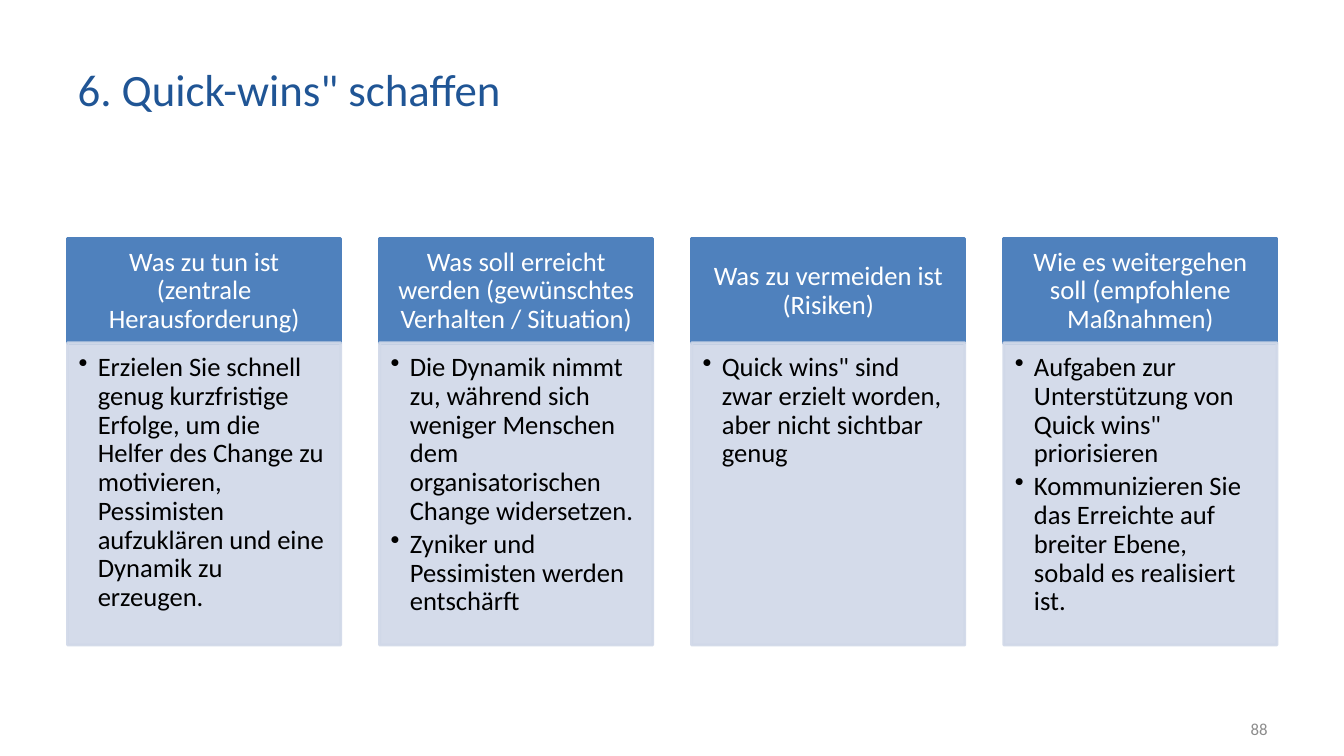
from lxml import etree
from pptx import Presentation
from pptx.dml.color import RGBColor
from pptx.enum import shapes, text
from pptx.oxml import ns
from pptx.util import Inches, Pt

TITLE_BLUE = RGBColor(0x20, 0x55, 0x95)
HEADER_BLUE = RGBColor(0x4F, 0x81, 0xBD)
BODY_BLUE = RGBColor(0xD0, 0xD8, 0xE8)
WHITE = RGBColor(0xFF, 0xFF, 0xFF)
BLACK = RGBColor(0, 0, 0)
NUMBER_GREY = RGBColor(0x8C, 0x8C, 0x8C)

LEFT, PITCH, WIDTH = 0.67, 3.095, 2.71
HEADER_TOP, HEADER_HEIGHT = 2.37, 1.04
BODY_TOP, BODY_HEIGHT = 3.4, 3
BODY_OPACITY = 90

COLUMNS = [
    ("Was zu tun ist (zentrale Herausforderung)",
     ["Erzielen Sie schnell genug kurzfristige Erfolge, um die Helfer des "
      "Change zu motivieren, Pessimisten aufzuklären und eine Dynamik zu "
      "erzeugen."]),
    ("Was soll erreicht werden (gewünschtes Verhalten / Situation)",
     ["Die Dynamik nimmt zu, während sich weniger Menschen dem "
      "organisatorischen Change widersetzen.",
      "Zyniker und Pessimisten werden entschärft"]),
    ("Was zu vermeiden ist (Risiken)",
     ['Quick wins" sind zwar erzielt worden, aber nicht sichtbar genug']),
    ("Wie es weitergehen soll (empfohlene Maßnahmen)",
     ['Aufgaben zur Unterstützung von Quick wins" priorisieren',
      "Kommunizieren Sie das Erreichte auf breiter Ebene, sobald es "
      "realisiert ist."]),
]


def place(shape, left, top, width, height):
    shape.left, shape.top = Inches(left), Inches(top)
    shape.width, shape.height = Inches(width), Inches(height)


def style(paragraph, size, color, align):
    paragraph.alignment = align
    paragraph.font.name = "Calibri"
    paragraph.font.size = Pt(size)
    paragraph.font.color.rgb = color


def set_opacity(fill_format, percent):
    """Add an alpha value to the solid colour of a shape's fill or line."""
    for color in fill_format.iter(ns.qn("a:srgbClr")):
        etree.SubElement(color, ns.qn("a:alpha"), val=str(percent * 1000))


def add_bullet(paragraph):
    properties = paragraph._p.get_or_add_pPr()
    properties.set("marL", str(Inches(0.19)))
    properties.set("indent", str(Inches(-0.19)))
    etree.SubElement(properties, ns.qn("a:buChar"), char="•")


def add_panel(slide, bounds, color, insets, anchor):
    """Add a filled rectangle and return it with its text frame set up."""
    panel = slide.shapes.add_shape(
        shapes.MSO_SHAPE.RECTANGLE, *(Inches(value) for value in bounds))
    panel.shadow.inherit = False
    panel.fill.solid()
    panel.fill.fore_color.rgb = color
    panel.line.color.rgb = color
    panel.line.width = Pt(2)
    frame = panel.text_frame
    frame.word_wrap = True
    frame.vertical_anchor = anchor
    (frame.margin_left, frame.margin_top,
     frame.margin_right, frame.margin_bottom) = map(Inches, insets)
    return panel


def add_header(slide, left, heading):
    header = add_panel(slide, (left, HEADER_TOP, WIDTH, HEADER_HEIGHT),
                       HEADER_BLUE, (0.15, 0.08, 0.15, 0.08),
                       text.MSO_ANCHOR.MIDDLE)
    paragraph = header.text_frame.paragraphs[0]
    paragraph.text = heading
    paragraph.line_spacing = 0.9
    style(paragraph, 19, WHITE, text.PP_ALIGN.CENTER)


def add_body(slide, left, points):
    body = add_panel(slide, (left, BODY_TOP, WIDTH, BODY_HEIGHT),
                     BODY_BLUE, (0.11, 0.11, 0.15, 0.17),
                     text.MSO_ANCHOR.TOP)
    set_opacity(body._element.spPr, BODY_OPACITY)
    frame = body.text_frame
    for index, point in enumerate(points):
        paragraph = frame.add_paragraph() if index else frame.paragraphs[0]
        paragraph.text = point
        add_bullet(paragraph)
        paragraph.line_spacing = 0.9
        paragraph.space_after = Pt(3)
        style(paragraph, 19, BLACK, text.PP_ALIGN.LEFT)


def set_title(slide, wording):
    title = slide.shapes.title
    place(title, LEFT, 0.3, 9.91, 1.15)
    title.text_frame.text = wording
    title.text_frame.vertical_anchor = text.MSO_ANCHOR.MIDDLE
    style(title.text_frame.paragraphs[0], 32, TITLE_BLUE, text.PP_ALIGN.LEFT)


def add_slide_number(slide, number):
    box = slide.shapes.add_textbox(
        Inches(9.56), Inches(7.03), Inches(3.11), Inches(0.4))
    frame = box.text_frame
    frame.word_wrap = True
    frame.vertical_anchor = text.MSO_ANCHOR.MIDDLE
    frame.text = number
    style(frame.paragraphs[0], 12, NUMBER_GREY, text.PP_ALIGN.RIGHT)


def main():
    deck = Presentation()
    deck.slide_width, deck.slide_height = Inches(13.33), Inches(7.5)
    slide = deck.slides.add_slide(deck.slide_layouts.get_by_name("Title Only"))
    set_title(slide, '6. Quick-wins" schaffen')
    for index, (heading, points) in enumerate(COLUMNS):
        left = LEFT + index * PITCH
        add_header(slide, left, heading)
        add_body(slide, left, points)
    add_slide_number(slide, "88")
    deck.save("out.pptx")


if __name__ == "__main__":
    main()
